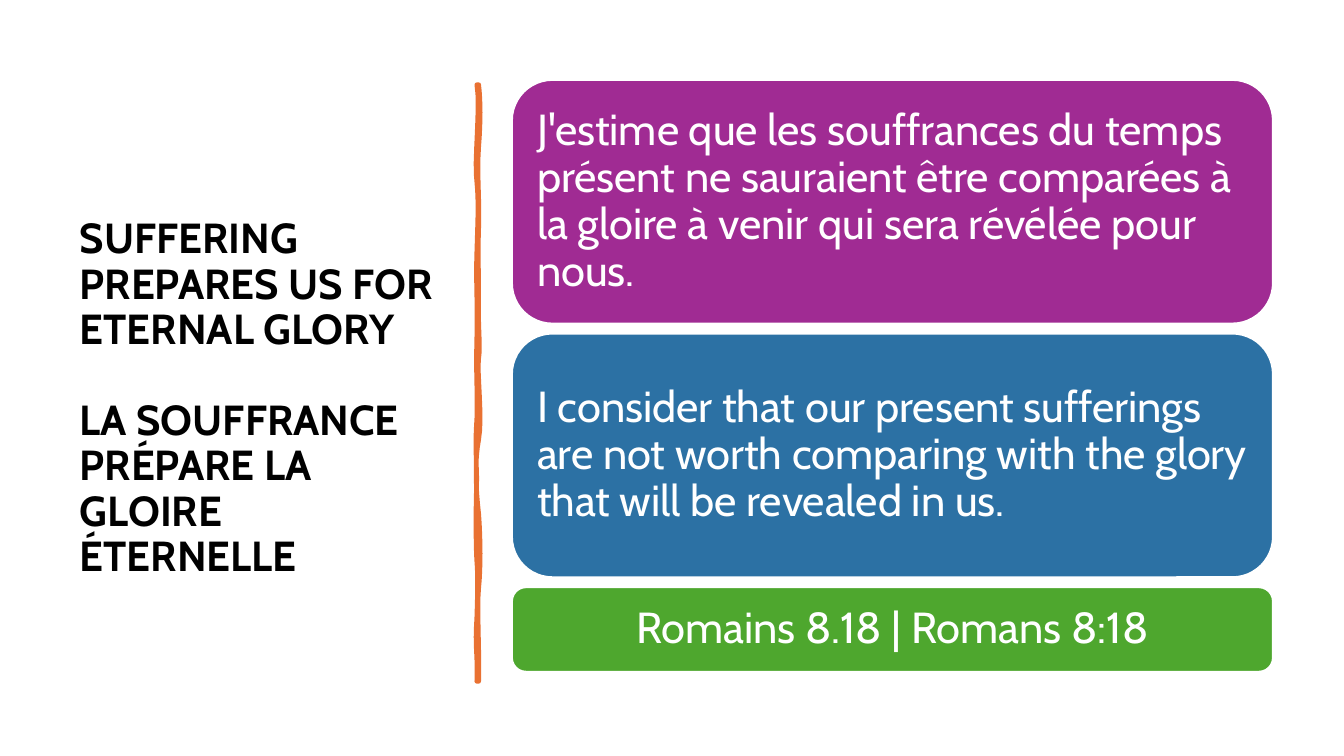
from dataclasses import dataclass

from pptx import Presentation
from pptx.dml.color import RGBColor
from pptx.enum import shapes, text
from pptx.util import Pt


@dataclass(frozen=True)
class Theme:
    font: str = "Cabin"
    ink: str = "000000"
    paper: str = "FFFFFF"
    rule: str = "E97132"
    purple: str = "A02B93"
    blue: str = "2C71A4"
    green: str = "4EA72E"
    title: float = 30
    body: float = 31


@dataclass(frozen=True)
class Card:
    words: str
    fill: str
    high: float
    align: text.PP_ALIGN = text.PP_ALIGN.LEFT


@dataclass(frozen=True)
class Edge:
    """One side of the rule; each bend is x1, y1, x2, y2, end y."""
    x: float
    top: float
    bends: tuple


THEME = Theme()
LEFT, TOP, WIDE, GAP = 365.6, 57, 543.7, 7
TITLE = (
    "SUFFERING PREPARES US FOR ETERNAL GLORY",
    "LA SOUFFRANCE PRÉPARE LA GLOIRE ÉTERNELLE",
)
CARDS = (
    Card("J'estime que les souffrances du temps présent ne sauraient être "
         "comparées à la gloire à venir qui sera révélée pour nous.",
         THEME.purple, 174.2),
    Card("I consider that our present sufferings are not worth comparing "
         "with the glory that will be revealed in us.", THEME.blue, 174.2),
    Card("Romains 8.18 | Romans 8:18", THEME.green, 60.5,
         text.PP_ALIGN.CENTER),
)
EDGES = (
    Edge(342, 60.5, (
        (343.4, 73, 343.4, 86, 105), (340.6, 125, 342.7, 140, 163),
        (341.3, 185, 342, 189, 212), (341.3, 234, 343.4, 246, 256),
        (340.6, 266, 344.9, 298, 314), (339.1, 329, 339.8, 348, 367),
        (343.4, 386, 343.4, 406, 420), (340.6, 434, 342.7, 468, 486.7))),
    Edge(340.6, 486.7, (
        (341.3, 465, 339.1, 464, 441), (341.3, 420, 341.3, 410, 401),
        (339.8, 392, 339.8, 356, 343), (340.6, 330, 339.1, 320, 299),
        (341.3, 278, 339.8, 269, 241), (341.3, 215, 339.8, 202, 180),
        (341.3, 157, 342, 144, 130), (338.4, 117, 343.4, 75, 60.5))),
)


def trace(edge: Edge, steps: int = 8) -> list[tuple[float, float]]:
    """Sample the cubic bends of an edge."""
    spots, y = [(edge.x, edge.top)], edge.top
    for x1, y1, x2, y2, end in edge.bends:
        for i in range(1, steps + 1):
            t = i / steps
            a, b, c, d = (1 - t) ** 3, 3 * t * (1 - t) ** 2, 3 * t * t * (1 - t), t ** 3
            spots.append((edge.x * (a + d) + x1 * b + x2 * c,
                          y * a + y1 * b + y2 * c + end * d))
        y = end
    return spots


def paint(shape, fill: str, line: str, width: float) -> None:
    shape.shadow.inherit = False
    shape.fill.solid()
    shape.fill.fore_color.rgb = RGBColor.from_string(fill)
    shape.line.color.rgb = RGBColor.from_string(line)
    shape.line.width = Pt(width)


def style(para, size: float, ink: str, bold: bool = False) -> None:
    para.line_spacing = 0.9
    font = para.font
    font.name, font.size, font.bold = THEME.font, Pt(size), bold
    font.color.rgb = RGBColor.from_string(ink)


def draw_title(slide) -> None:
    box = slide.shapes.add_textbox(Pt(50), Pt(65), Pt(269), Pt(440))
    frame = box.text_frame
    frame.word_wrap = True
    frame.vertical_anchor = text.MSO_ANCHOR.MIDDLE
    frame.text = "\n".join(TITLE)
    for para in frame.paragraphs:
        style(para, THEME.title, THEME.ink, True)
    frame.paragraphs[-1].space_before = Pt(32.5)


def draw_rule(slide) -> None:
    first, *rest = [(Pt(x), Pt(y)) for edge in EDGES for x, y in trace(edge)]
    pen = slide.shapes.build_freeform(*first)
    pen.add_line_segments(rest, close=True)
    paint(pen.convert_to_shape(), THEME.rule, THEME.rule, 3.25)


def draw_card(slide, card: Card, top: float) -> None:
    shape = slide.shapes.add_shape(
        shapes.MSO_SHAPE.ROUNDED_RECTANGLE,
        Pt(LEFT), Pt(top), Pt(WIDE), Pt(card.high))
    paint(shape, card.fill, THEME.paper, 1.5)
    frame = shape.text_frame
    frame.word_wrap = True
    frame.vertical_anchor = text.MSO_ANCHOR.MIDDLE
    # The rounded corners already push the text in by a share of the height.
    inset = 18 - 0.0488 * card.high
    frame.margin_left = frame.margin_right = Pt(inset)
    frame.margin_top = frame.margin_bottom = Pt(4)
    frame.text = card.words
    para = frame.paragraphs[0]
    para.alignment = card.align
    style(para, THEME.body, THEME.paper)


def main() -> None:
    deck = Presentation()
    deck.slide_width, deck.slide_height = Pt(960), Pt(540)
    slide = deck.slides.add_slide(deck.slide_layouts[6])
    draw_title(slide)
    draw_rule(slide)
    top = TOP
    for card in CARDS:
        draw_card(slide, card, top)
        top += card.high + GAP
    deck.save("out.pptx")


if __name__ == "__main__":
    main()
